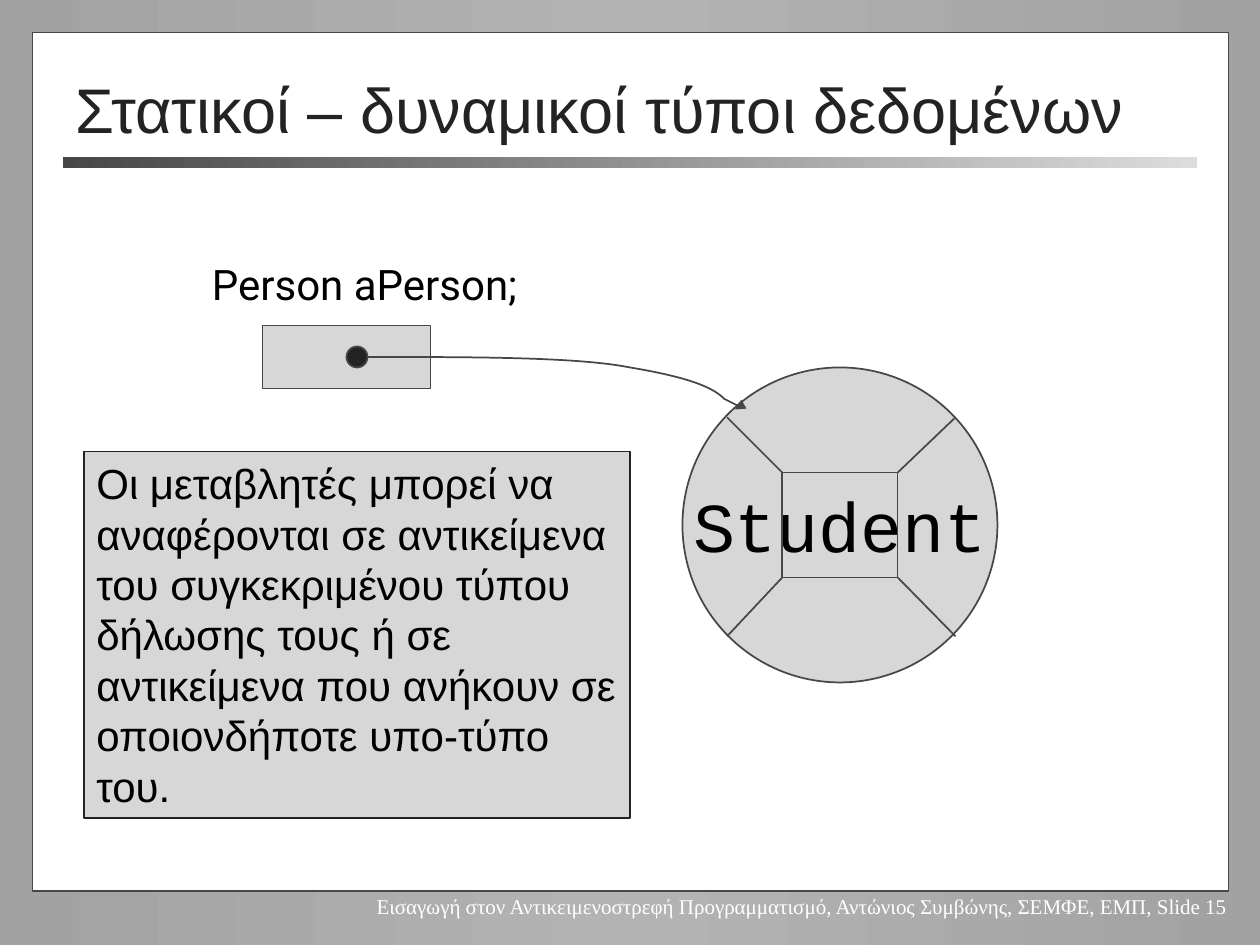
"""Builds a slide on static and dynamic data types."""
from copy import deepcopy
from dataclasses import dataclass

from lxml import etree
from pptx import Presentation
from pptx.dml.color import RGBColor
from pptx.enum.shapes import MSO_CONNECTOR, MSO_SHAPE
from pptx.enum.text import MSO_ANCHOR, MSO_AUTO_SIZE, PP_ALIGN
from pptx.oxml.ns import qn
from pptx.util import Inches, Pt

RECT, OVAL = MSO_SHAPE.RECTANGLE, MSO_SHAPE.OVAL
LINE = MSO_CONNECTOR.STRAIGHT
LEFT, MID, RIGHT = PP_ALIGN.LEFT, PP_ALIGN.CENTER, PP_ALIGN.RIGHT
TOP, MIDDLE = MSO_ANCHOR.TOP, MSO_ANCHOR.MIDDLE
FIT, FIXED = MSO_AUTO_SIZE.SHAPE_TO_FIT_TEXT, MSO_AUTO_SIZE.NONE
COLS, ROWS = 120, 90


@dataclass(frozen=True)
class Theme:
    edge: str = "474747"
    dark: str = "232323"
    pale: str = "D7D7D7"
    fade: str = "DCDCDC"
    rim: str = "A2A2A2"
    glow: str = "B3B3B3"
    white: str = "FFFFFF"
    black: str = "000000"
    head: int = 36
    big: int = 40
    body: int = 24
    foot: int = 12


look = Theme()
rgb = RGBColor.from_string
deck = Presentation()
deck.slide_width, deck.slide_height = Inches(10), Inches(7.5)
cell = deck.slide_width / COLS
slide = deck.slides.add_slide(deck.slide_layouts[5])
shapes = slide.shapes


def block(kind, box, fill=None, edge=look.edge):
    """Add a preset shape placed in grid cells."""
    shape = shapes.add_shape(kind, *(round(n * cell) for n in box))
    shape.shadow.inherit = False
    if fill:
        shape.fill.solid()
        shape.fill.fore_color.rgb = rgb(fill)
    else:
        shape.fill.background()
    if edge:
        shape.line.color.rgb = rgb(edge)
        shape.line.width = Pt(1)
    else:
        shape.line.fill.background()
    return shape


def write(shape, text, font, size, color, align=LEFT, anchor=TOP, wrap=True, fit=FIXED):
    """Put one formatted paragraph into a shape."""
    frame = shape.text_frame
    frame.text = text
    frame.word_wrap, frame.auto_size = wrap, fit
    frame.vertical_anchor = anchor
    para = frame.paragraphs[0]
    para.alignment = align
    face = para.runs[0].font
    face.name, face.size = font, Pt(size)
    face.color.rgb = rgb(color)


back = slide.background.fill
back.gradient()
back.gradient_angle = 0
for stop, color in zip(back.gradient_stops, (look.rim, look.glow)):
    stop.color.rgb = rgb(color)
back.gradient_stops[1].position = 0.5
stops = slide.element.xpath(".//a:gsLst")[0]
last = deepcopy(stops[0])
last.set("pos", "100000")
stops.append(last)

block(RECT, (3.1, 3.1, 113.9, 81.8), look.white)
bar = block(RECT, (6, 15, 108, 1), edge=None)
bar.fill.gradient()
bar.fill.gradient_angle = 0
for stop, color, spot in zip(bar.fill.gradient_stops, (look.edge, look.fade), (0, 1)):
    stop.color.rgb = rgb(color)
    stop.position = spot

foot = shapes.add_textbox(*(round(n * cell) for n in (33.5, 84.5, 84.6, 3.6)))
write(foot, "Εισαγωγή στον Αντικειμενοστρεφή Προγραμματισμό, "
      "Αντώνιος Συμβώνης, ΣΕΜΦΕ, ΕΜΠ, Slide 15",
      "Times New Roman", look.foot, look.white, RIGHT, wrap=False, fit=FIT)

title = shapes.title
title.left, title.top, title.width, title.height = (
    round(n * cell) for n in (6, 6.6, 105, 7.4))
write(title, "Στατικοί – δυναμικοί τύποι δεδομένων",
      "Arial", look.head, look.dark, anchor=MIDDLE)
title.element.getparent().append(title.element)

disc = block(OVAL, (65, 35, 30, 30), look.pale)
write(disc, "Student", "Courier New", look.big, look.black, MID, MIDDLE, wrap=False)
block(RECT, (74.5, 45, 11, 10))
for x, far in ((85.5, 91), (74.5, 69.25)):
    for y, end in ((45, 39.75), (55, 60.6)):
        spoke = shapes.add_connector(LINE, *(round(n * cell) for n in (x, y, far, end)))
        spoke.line.color.rgb = rgb(look.edge)
        spoke.line.width = Pt(1)
        etree.SubElement(spoke.element.spPr, qn("a:effectLst"))

block(RECT, (25, 31, 16, 6), look.pale)
label = shapes.add_textbox(*(round(n * cell) for n in (19, 24, 32.3, 6)))
write(label, "Person aPerson;", "Roboto", look.body, look.black, wrap=False, fit=FIT)

bends = ((44.64, 34.2), (54.36, 34.32), (60, 35),
         (65.64, 35.64), (67.32, 37.32), (69, 38),
         (70.68, 38.64), (70.32, 38.76), (70, 39))
pen = shapes.build_freeform(35, 34, scale=cell)
pen.add_line_segments(bends, close=False)
curve = pen.convert_to_shape()
curve.shadow.inherit = False
curve.fill.background()
curve.line.color.rgb = rgb(look.edge)
curve.line.width = Pt(1)
etree.SubElement(curve.line._get_or_add_ln(), qn("a:tailEnd"), type="triangle")
trace = curve.element.xpath(".//a:path")[0]
legs = trace.findall(qn("a:lnTo"))
box = trace.xpath("./a:moveTo/a:pt")[0]
scale = (int(trace.get("w")) / (70.68 - 35), int(trace.get("h")) / (39 - 34))
for leg, (x, y) in zip(legs, bends):
    leg[0].set("x", str(round((x - 35) * scale[0])))
    leg[0].set("y", str(round((y - 34) * scale[1])))
box.set("x", "0")
box.set("y", "0")
for n in range(0, len(legs), 3):
    arc = etree.SubElement(trace, qn("a:cubicBezTo"))
    for leg in legs[n:n + 3]:
        arc.append(leg[0])
        trace.remove(leg)

block(OVAL, (33, 33, 2, 2), look.dark)
note = block(RECT, (8, 43, 52, 34.9), look.pale, look.dark)
write(note, "Οι μεταβλητές μπορεί να αναφέρονται σε αντικείμενα του "
      "συγκεκριμένου τύπου δήλωσης τους ή σε αντικείμενα που ανήκουν σε "
      "οποιονδήποτε υπο-τύπο του.", "Arial", look.body, look.black, fit=FIT)

deck.save("out.pptx")
